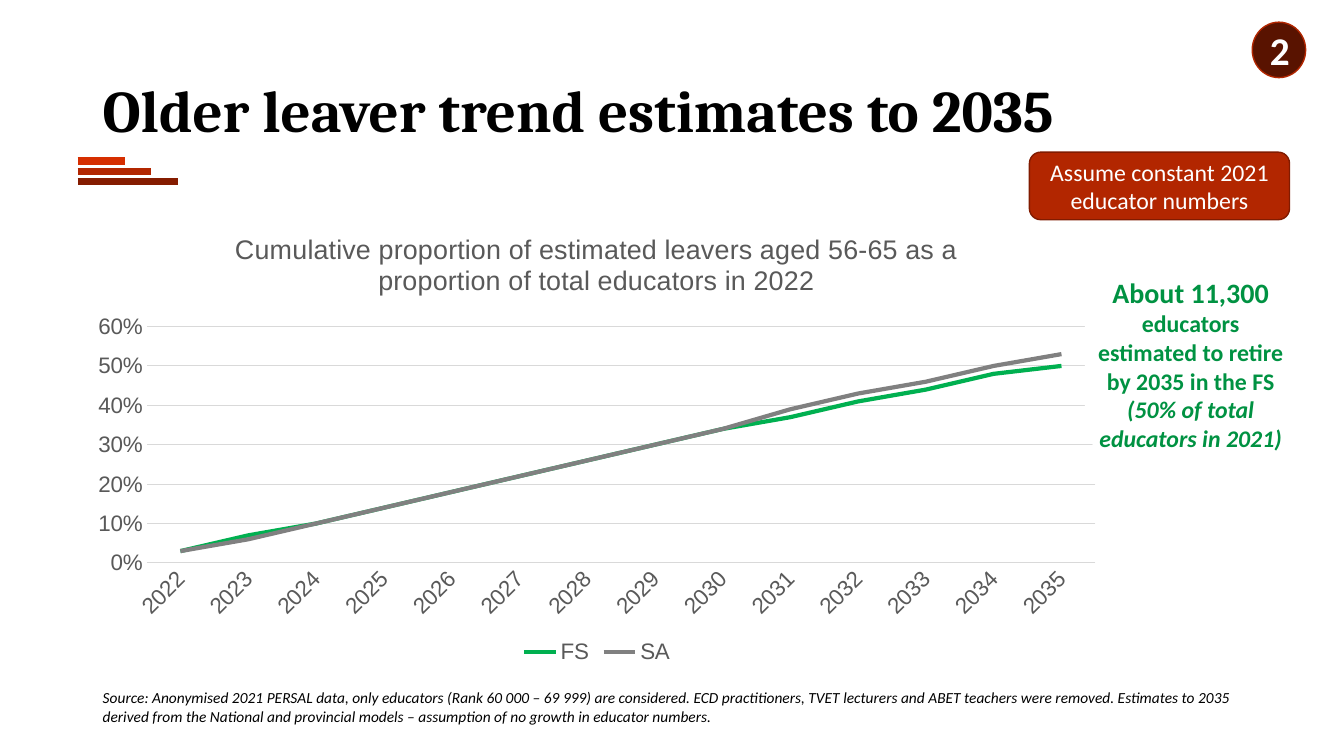
"""Build the slide on older leaver trend estimates to 2035."""
from dataclasses import dataclass

from lxml.etree import SubElement
from pptx import Presentation
from pptx.chart.data import CategoryChartData
from pptx.dml.color import RGBColor
from pptx.enum.chart import XL_CHART_TYPE, XL_LEGEND_POSITION, XL_TICK_MARK
from pptx.enum.shapes import MSO_CONNECTOR, MSO_SHAPE
from pptx.enum.text import MSO_ANCHOR, PP_ALIGN
from pptx.oxml.ns import qn
from pptx.util import Inches, Pt


@dataclass(frozen=True)
class Theme:
    """Colours, fonts and type sizes of the slide."""

    black: str = "000000"
    white: str = "FFFFFF"
    orange: str = "D62E00"
    rust: str = "B22600"
    maroon: str = "851C00"
    outline: str = "811B00"
    dark: str = "591300"
    message: str = "009242"
    province: str = "00B050"
    country: str = "808080"
    axis: str = "595959"
    grid: str = "D9D9D9"
    heading_font: str = "Cambria"
    body_font: str = "Calibri"
    chart_font: str = "Arial"
    heading: float = 42
    badge: float = 28
    lead: float = 20
    chart_title: float = 19.2
    body: float = 17
    chart: float = 16
    source: float = 11


class SlideBuilder:
    """Draws styled elements on the current slide."""

    def __init__(self, slide, theme):
        self.slide = slide
        self.theme = theme

    def style_font(self, font, size, color, name=None, bold=False, italic=False):
        """Apply typeface, size, colour and emphasis to a font."""
        font.name = name or self.theme.body_font
        font.size = Pt(size)
        font.color.rgb = RGBColor.from_string(color)
        font.bold, font.italic = bold, italic

    def style_line(self, line, color, width):
        """Apply colour and width to a line."""
        line.color.rgb = RGBColor.from_string(color)
        line.width = Pt(width)

    def text(self, box, text, size, color, **style):
        """Add a text box holding one paragraph."""
        frame = self.slide.shapes.add_textbox(*map(Inches, box)).text_frame
        frame.word_wrap = True
        frame.vertical_anchor = MSO_ANCHOR.MIDDLE
        paragraph = frame.paragraphs[0]
        paragraph.text = text
        self.style_font(paragraph.font, size, color, **style)
        return paragraph

    def shape(self, kind, box, fill, paragraphs, outline=None, inset=None):
        """Add a filled shape with centred paragraphs."""
        shape = self.slide.shapes.add_shape(kind, *map(Inches, box))
        shape.shadow.inherit = False
        shape.fill.solid()
        shape.fill.fore_color.rgb = RGBColor.from_string(fill)
        if outline:
            self.style_line(shape.line, outline, 1)
        else:
            shape.line.fill.background()
        frame = shape.text_frame
        frame.word_wrap = True
        frame.vertical_anchor = MSO_ANCHOR.MIDDLE
        if inset is not None:
            frame.margin_left = frame.margin_right = Inches(inset)
            frame.margin_top = frame.margin_bottom = Inches(inset)
        for index, (text, style) in enumerate(paragraphs):
            paragraph = frame.add_paragraph() if index else frame.paragraphs[0]
            paragraph.text = text
            paragraph.alignment = PP_ALIGN.CENTER
            self.style_font(paragraph.font, **style)

    def bar(self, left, right, top, color):
        """Add a thick horizontal line."""
        connector = self.slide.shapes.add_connector(
            MSO_CONNECTOR.STRAIGHT, *map(Inches, (left, top, right, top)))
        self.style_line(connector.line, color, 5.5)
        SubElement(connector._element.spPr, qn("a:effectLst"))

    def line_chart(self, box, title, categories, series):
        """Add a line chart of percentages with a legend below."""
        theme = self.theme
        data = CategoryChartData(number_format="0%")
        data.categories = categories
        for name, values, _ in series:
            data.add_series(name, values)
        chart = self.slide.shapes.add_chart(
            XL_CHART_TYPE.LINE, *map(Inches, box), data).chart
        self.style_font(chart.font, theme.chart, theme.axis, theme.chart_font)

        chart.has_title = True
        paragraph = chart.chart_title.text_frame.paragraphs[0]
        paragraph.text = title
        self.style_font(paragraph.font, theme.chart_title, theme.axis, theme.chart_font)
        chart.chart_title.include_in_layout = False

        chart.has_legend = True
        chart.legend.position = XL_LEGEND_POSITION.BOTTOM
        chart.legend.include_in_layout = False
        self.style_font(chart.legend.font, theme.chart, theme.axis, theme.chart_font)

        for axis in (chart.category_axis, chart.value_axis):
            axis.major_tick_mark = axis.minor_tick_mark = XL_TICK_MARK.NONE
            self.style_font(axis.tick_labels.font, theme.chart, theme.axis, theme.chart_font)
        self.style_line(chart.category_axis.format.line, theme.grid, 0.75)
        label_body = chart.category_axis._element.find(qn("c:txPr")).find(qn("a:bodyPr"))
        label_body.set("rot", "-2700000")
        label_body.set("vert", "horz")

        value_axis = chart.value_axis
        value_axis.minimum_scale, value_axis.maximum_scale = 0, 0.6
        value_axis.major_unit = 0.1
        value_axis.format.line.fill.background()
        value_axis.tick_labels.number_format = "0%"
        value_axis.tick_labels.number_format_is_linked = False
        self.style_line(value_axis.major_gridlines.format.line, theme.grid, 0.75)

        plot = chart.plots[0]
        plot.vary_by_categories = False
        for line, (_, _, color) in zip(plot.series, series):
            line.smooth = False
            self.style_line(line.format.line, color, 3)


def main():
    """Build and save the presentation."""
    presentation = Presentation()
    presentation.slide_width, presentation.slide_height = Inches(13.33), Inches(7.5)
    theme = Theme()
    slide = presentation.slides.add_slide(presentation.slide_layouts[6])
    builder = SlideBuilder(slide, theme)

    bars = ((1.24, theme.orange), (1.5, theme.rust), (1.77, theme.maroon))
    for row, (right, color) in enumerate(bars):
        builder.bar(0.77, right, 1.6 + 0.1 * row, color)

    title = builder.text(
        (0.92, 0.4, 11.5, 1.45), "Older leaver trend estimates to 2035",
        theme.heading, theme.black, name=theme.heading_font, bold=True)
    title.line_spacing = 0.9
    builder.text(
        (0.92, 6.83, 11.72, 0.37),
        "Source: Anonymised 2021 PERSAL data, only educators (Rank 60 000 – 69 999) are "
        "considered. ECD practitioners, TVET lecturers and ABET teachers were removed. "
        "Estimates to 2035 derived from the National and provincial models – assumption "
        "of no growth in educator numbers.",
        theme.source, theme.black, italic=True)

    builder.shape(
        MSO_SHAPE.ROUNDED_RECTANGLE, (10.21, 1.51, 2.58, 0.67), theme.rust,
        [("Assume constant 2021 educator numbers", dict(size=theme.body, color=theme.white))],
        outline=theme.outline)

    builder.line_chart(
        (0.77, 2.1, 10.3, 4.53),
        "Cumulative proportion of estimated leavers aged 56-65 as a "
        "proportion of total educators in 2022",
        [str(year) for year in range(2022, 2036)],
        [("FS", (0.03, 0.07, 0.1, 0.14, 0.18, 0.22, 0.26, 0.3,
                 0.34, 0.37, 0.41, 0.44, 0.48, 0.5), theme.province),
         ("SA", (0.03, 0.06, 0.1, 0.14, 0.18, 0.22, 0.26, 0.3,
                 0.34, 0.39, 0.43, 0.46, 0.5, 0.53), theme.country)])

    message = dict(size=theme.body, color=theme.message, bold=True)
    builder.shape(
        MSO_SHAPE.ROUNDED_RECTANGLE, (10.76, 2.71, 2.1, 1.8), theme.white,
        [("About 11,300", message | dict(size=theme.lead)),
         ("educators estimated to retire by 2035 in the FS", message),
         ("(50% of total educators in 2021)", message | dict(italic=True))],
        inset=0)
    builder.shape(
        MSO_SHAPE.OVAL, (12.42, 0.22, 0.53, 0.55), theme.dark,
        [("2", dict(size=theme.badge, color=theme.white, bold=True))],
        outline=theme.rust)

    presentation.save("out.pptx")


if __name__ == "__main__":
    main()
